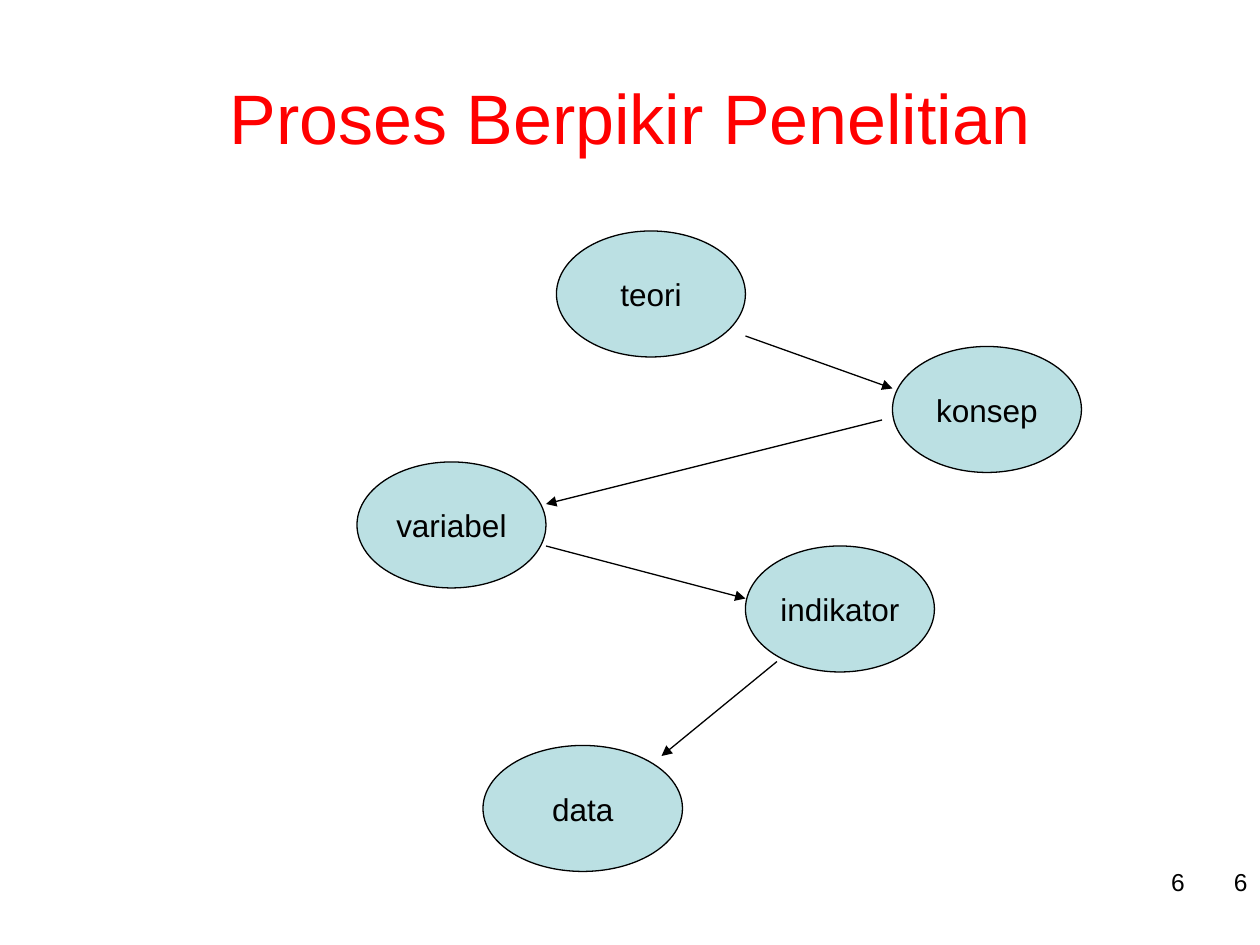
import pptx
import pptx.util
import pptx.dml.color
import pptx.enum.shapes
import pptx.enum.text
import pptx.oxml.ns
import lxml.etree

BLACK = pptx.dml.color.RGBColor(0x00, 0x00, 0x00)
RED = pptx.dml.color.RGBColor(0xFF, 0x00, 0x00)
PALE_TEAL = pptx.dml.color.RGBColor(0xBB, 0xE0, 0xE3)
COLUMNS, ROWS = 120, 90

deck = pptx.Presentation()
deck.slide_width = pptx.util.Inches(10)
deck.slide_height = pptx.util.Inches(7.5)
page = deck.slides.add_slide(deck.slide_layouts[6])


def grid(column, row):
    """Turn a column and a row of the grid into slide lengths."""
    return (round(deck.slide_width * column / COLUMNS),
            round(deck.slide_height * row / ROWS))


def write(shape, text, size, color, align, anchor, wrap):
    frame = shape.text_frame
    frame.word_wrap = wrap
    frame.vertical_anchor = anchor
    para = frame.paragraphs[0]
    para.text = text
    para.alignment = align
    para.font.name = "Arial"
    para.font.size = pptx.util.Pt(size)
    para.font.color.rgb = color


ALIGN = pptx.enum.text.PP_ALIGN
ANCHOR = pptx.enum.text.MSO_ANCHOR

# Title
title = page.shapes.add_textbox(*grid(6, 3.6), *grid(108, 15))
write(title, "Proses Berpikir Penelitian", 40, RED, ALIGN.CENTER, ANCHOR.MIDDLE, True)

# Stages of the thinking process: name, left column, top row, width
stages = [
    ("teori", 53, 22, 18),
    ("konsep", 85, 33, 18),
    ("variabel", 34, 44, 18),
    ("indikator", 71, 52, 18),
    ("data", 46, 71, 19),
]
for name, column, row, width in stages:
    oval = page.shapes.add_shape(pptx.enum.shapes.MSO_SHAPE.OVAL,
                                 *grid(column, row), *grid(width, 12))
    oval.shadow.inherit = False
    oval.fill.solid()
    oval.fill.fore_color.rgb = PALE_TEAL
    oval.line.color.rgb = BLACK
    oval.line.width = pptx.util.Pt(0.75)
    write(oval, name, 18, BLACK, ALIGN.CENTER, ANCHOR.MIDDLE, False)

# Arrows from each stage to the next: start and end on the grid
arrows = [
    ((71, 32), (85, 37)),
    ((84, 40), (52, 48)),
    ((52, 52), (71, 57)),
    ((74, 63), (63, 72)),
]
for start, end in arrows:
    arrow = page.shapes.add_connector(pptx.enum.shapes.MSO_CONNECTOR.STRAIGHT,
                                      *grid(*start), *grid(*end))
    arrow.line.color.rgb = BLACK
    arrow.line.width = pptx.util.Pt(0.75)
    outline = arrow.line._get_or_add_ln()
    lxml.etree.SubElement(outline, pptx.oxml.ns.qn("a:tailEnd"), type="triangle")
    lxml.etree.SubElement(arrow._element.spPr, pptx.oxml.ns.qn("a:effectLst"))

# Page numbers
for column, width in [(95, 25), (86, 28)]:
    number = page.shapes.add_textbox(*grid(column, 82), *grid(width, 6))
    write(number, "6", 14, BLACK, ALIGN.RIGHT, ANCHOR.TOP, True)

deck.save("out.pptx")
